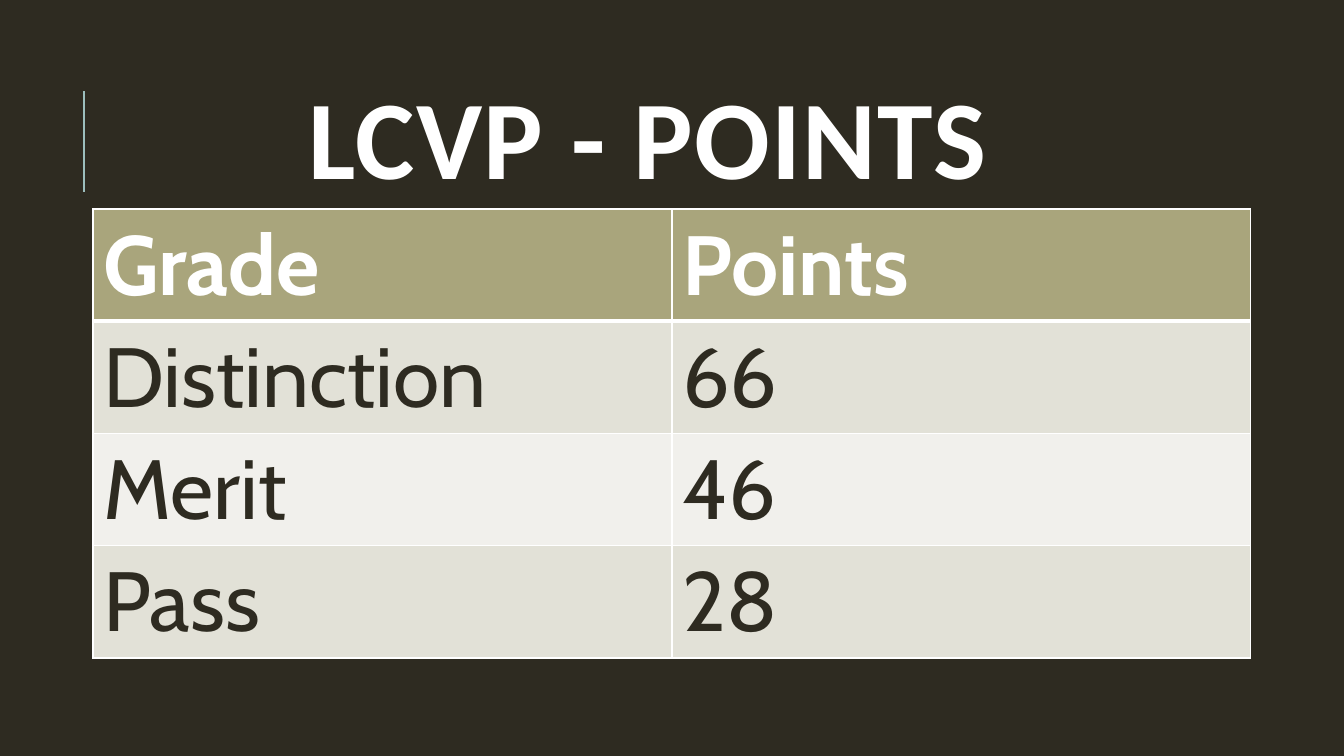
from lxml import etree
from pptx import Presentation
from pptx.dml.color import RGBColor
from pptx.enum.shapes import MSO_CONNECTOR
from pptx.enum.text import MSO_ANCHOR, MSO_AUTO_SIZE, PP_ALIGN
from pptx.oxml.ns import qn
from pptx.util import Emu, Pt

TITLE = "LCVP - POINTS"
ROWS = [
    ("Grade", "Points"),
    ("Distinction", "66"),
    ("Merit", "46"),
    ("Pass", "28"),
]

DARK = RGBColor(0x2E, 0x2B, 0x21)
WHITE = RGBColor(0xFF, 0xFF, 0xFF)
TEAL = RGBColor(0x9C, 0xBE, 0xBD)
HEADER_FILL = RGBColor(0xA9, 0xA5, 0x7C)
BAND_FILLS = [RGBColor(0xF1, 0xF0, 0xEC), RGBColor(0xE2, 0xE1, 0xD7)]

STRAIGHT = MSO_CONNECTOR.STRAIGHT
MIDDLE = MSO_ANCHOR.MIDDLE
CENTER = PP_ALIGN.CENTER
NO_AUTOFIT = MSO_AUTO_SIZE.NONE

SLIDE_WIDTH, SLIDE_HEIGHT = 1344, 756
TITLE_BOX = (113, 65, 1071, 165)
ACCENT_X, ACCENT_TOP, ACCENT_BOTTOM = 84, 91, 192
TABLE_LEFT, TABLE_TOP = 93, 209
COLUMN_WIDTH, ROW_HEIGHT = 579, 112


def px(length):
    return Emu(round(length * 914400 / 100.8))


def format_run(run, font_name, size, color, bold):
    run.font.name = font_name
    run.font.size = Pt(size)
    run.font.color.rgb = color
    run.font.bold = bold


def add_borders(cell, bottom_width):
    properties = cell._tc.get_or_add_tcPr()
    widths = {"a:lnL": 1, "a:lnR": 1, "a:lnT": 1, "a:lnB": bottom_width}
    for position, (tag, width) in enumerate(widths.items()):
        line = etree.Element(qn(tag), w=str(Pt(width)))
        fill = etree.SubElement(line, qn("a:solidFill"))
        etree.SubElement(fill, qn("a:srgbClr"), val=str(WHITE))
        properties.insert(position, line)


def add_title(slide):
    title = slide.shapes.title
    title.left, title.top, title.width, title.height = map(px, TITLE_BOX)
    frame = title.text_frame
    frame.text = TITLE
    frame.word_wrap = True
    frame.auto_size = NO_AUTOFIT
    frame.vertical_anchor = MIDDLE
    paragraph = frame.paragraphs[0]
    paragraph.alignment = CENTER
    paragraph.line_spacing = 0.8
    run = paragraph.runs[0]
    format_run(run, "Calibri", 80, WHITE, True)
    run.font._element.set("spc", "100")


def add_accent(slide):
    accent = slide.shapes.add_connector(
        STRAIGHT, px(ACCENT_X), px(ACCENT_BOTTOM), px(ACCENT_X), px(ACCENT_TOP)
    )
    accent.line.color.rgb = TEAL
    accent.line.width = Pt(1.5)
    etree.SubElement(accent._element.spPr, qn("a:effectLst"))


def add_grades(slide):
    row_count, column_count = len(ROWS), len(ROWS[0])
    table = slide.shapes.add_table(
        row_count, column_count, px(TABLE_LEFT), px(TABLE_TOP),
        px(column_count * COLUMN_WIDTH), px(row_count * ROW_HEIGHT),
    ).table
    for row_index, values in enumerate(ROWS):
        is_header = row_index == 0
        for column_index, value in enumerate(values):
            cell = table.cell(row_index, column_index)
            cell.text = value
            cell.fill.solid()
            cell.fill.fore_color.rgb = HEADER_FILL if is_header else BAND_FILLS[row_index % 2]
            run = cell.text_frame.paragraphs[0].runs[0]
            format_run(run, "Cabin", 60, WHITE if is_header else DARK, is_header)
            add_borders(cell, 3 if is_header else 1)


def main():
    presentation = Presentation()
    presentation.slide_width = px(SLIDE_WIDTH)
    presentation.slide_height = px(SLIDE_HEIGHT)
    slide = presentation.slides.add_slide(presentation.slide_layouts[5])
    slide.background.fill.solid()
    slide.background.fill.fore_color.rgb = DARK
    add_accent(slide)
    add_title(slide)
    add_grades(slide)
    presentation.save("out.pptx")


if __name__ == "__main__":
    main()
